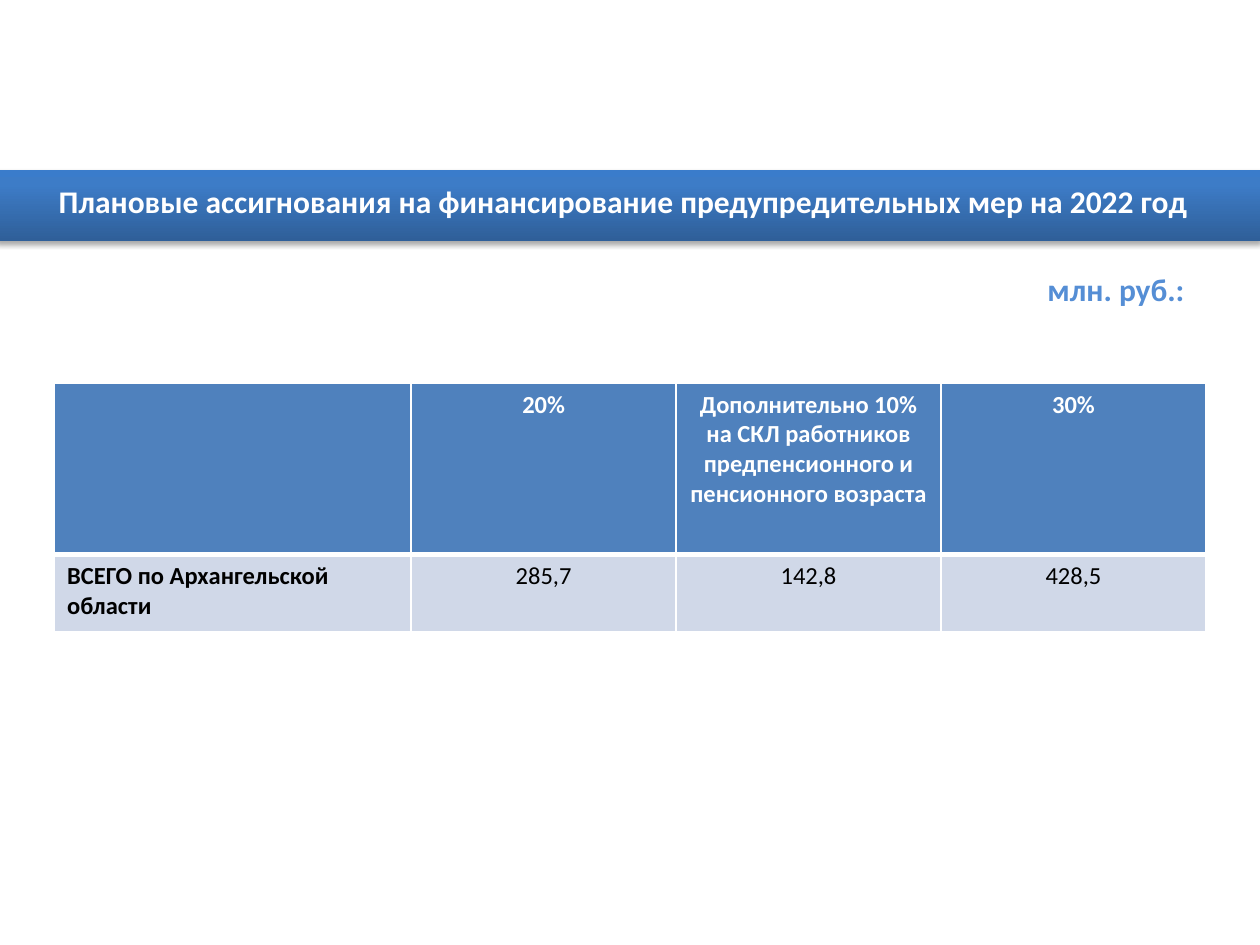
from dataclasses import dataclass

from lxml.etree import SubElement
from pptx import Presentation
from pptx.dml.color import RGBColor
from pptx.enum.text import MSO_ANCHOR as Anchor, PP_ALIGN as Align
from pptx.oxml import parse_xml
from pptx.oxml.ns import nsdecls, qn
from pptx.util import Cm, Pt

FONT = "Calibri"
WHITE, BLACK = "FFFFFF", "000000"
HEADER_BLUE, ROW_BLUE, UNIT_BLUE = "4F81BD", "D0D8E8", "558ED5"


@dataclass
class RowStyle:
    height: float
    fill: str
    color: str
    bold_columns: int
    top_border: float
    bottom_border: float


@dataclass
class TableRow:
    texts: tuple[str, ...]
    style: RowStyle


HEADER = RowStyle(3.45, HEADER_BLUE, WHITE, 4, 1, 3)
TOTAL = RowStyle(1.55, ROW_BLUE, BLACK, 1, 3, 1)
ROWS = [
    TableRow(("", "20%", "Дополнительно 10% на СКЛ работников "
              "предпенсионного и пенсионного возраста", "30%"), HEADER),
    TableRow(("ВСЕГО по Архангельской области", "285,7", "142,8", "428,5"), TOTAL),
]
COLUMN_WIDTHS = (7.19, 5.34, 5.34, 5.34)


def rgb(color: str) -> RGBColor:
    return RGBColor.from_string(color)


def format_paragraph(paragraph, size: float, color: str, bold: bool, align: Align) -> None:
    paragraph.alignment = align
    font = paragraph.font
    font.name, font.size, font.bold = FONT, Pt(size), bold
    font.color.rgb = rgb(color)


def place(shape, left: float, top: float, width: float, height: float) -> None:
    shape.left, shape.top = Cm(left), Cm(top)
    shape.width, shape.height = Cm(width), Cm(height)


def style_banner(banner) -> None:
    """Give the title a rounded outline, a gradient and a soft shadow."""
    ns = nsdecls("a")
    stops = "".join(f'<a:gs pos="{pos * 1000}"><a:srgbClr val="{color}"/></a:gs>'
                    for pos, color in ((0, "2F5F99"), (80, "3D7CC7"), (100, "3A7CCB")))
    parts = (
        f'<a:prstGeom {ns} prst="roundRect"><a:avLst/></a:prstGeom>',
        f'<a:gradFill {ns} rotWithShape="1"><a:gsLst>{stops}</a:gsLst>'
        '<a:lin ang="16200000" scaled="0"/></a:gradFill>',
        f'<a:effectLst {ns}><a:outerShdw blurRad="{Pt(3.1)}" dist="{Pt(1.8)}" '
        f'dir="5400000" rotWithShape="0"><a:srgbClr val="{BLACK}">'
        '<a:alpha val="35000"/></a:srgbClr></a:outerShdw></a:effectLst>',
    )
    for part in parts:
        banner.element.spPr.append(parse_xml(part))


def add_borders(cell, top: float, bottom: float) -> None:
    properties = cell._tc.get_or_add_tcPr()
    widths = (("lnL", 1), ("lnR", 1), ("lnT", top), ("lnB", bottom))
    for position, (side, width) in enumerate(widths):
        line = SubElement(properties, qn(f"a:{side}"), w=str(Pt(width)))
        SubElement(SubElement(line, qn("a:solidFill")), qn("a:srgbClr"), val=WHITE)
        properties.insert(position, line)


def add_budget_table(slide, left: float, top: float) -> None:
    heights = [row.style.height for row in ROWS]
    table = slide.shapes.add_table(
        len(ROWS), len(COLUMN_WIDTHS), Cm(left), Cm(top),
        Cm(sum(COLUMN_WIDTHS)), Cm(sum(heights))).table
    table.horz_banding = False
    for column, width in zip(table.columns, COLUMN_WIDTHS):
        column.width = Cm(width)
    for table_row, row in zip(table.rows, ROWS):
        style = row.style
        table_row.height = Cm(style.height)
        for index, (cell, text) in enumerate(zip(table_row.cells, row.texts)):
            cell.text = text
            cell.fill.solid()
            cell.fill.fore_color.rgb = rgb(style.fill)
            add_borders(cell, style.top_border, style.bottom_border)
            format_paragraph(cell.text_frame.paragraphs[0], 14, style.color,
                             index < style.bold_columns,
                             Align.CENTER if index else Align.LEFT)


def main() -> None:
    prs = Presentation()
    prs.slide_width, prs.slide_height = Cm(25.4), Cm(19.05)
    slide = prs.slides.add_slide(prs.slide_layouts[5])

    # Title banner
    banner = slide.shapes.title
    place(banner, -0.08, 3.43, 25.5, 1.42)
    style_banner(banner)
    heading = banner.text_frame
    heading.text = "Плановые ассигнования на финансирование предупредительных мер на 2022 год"
    heading.vertical_anchor = Anchor.MIDDLE
    heading.margin_right, heading.margin_bottom = Cm(0.46), Cm(0.29)
    format_paragraph(heading.paragraphs[0], 18, WHITE, True, Align.CENTER)

    # Unit of measure
    unit = slide.shapes.add_textbox(Cm(1.27), Cm(5.31), Cm(22.86), Cm(1.02)).text_frame
    unit.word_wrap = True
    unit.text = "млн. руб.:"
    format_paragraph(unit.paragraphs[0], 18, UNIT_BLUE, True, Align.RIGHT)

    # Planned amounts
    add_budget_table(slide, 1.1, 7.73)

    prs.save("out.pptx")


if __name__ == "__main__":
    main()
